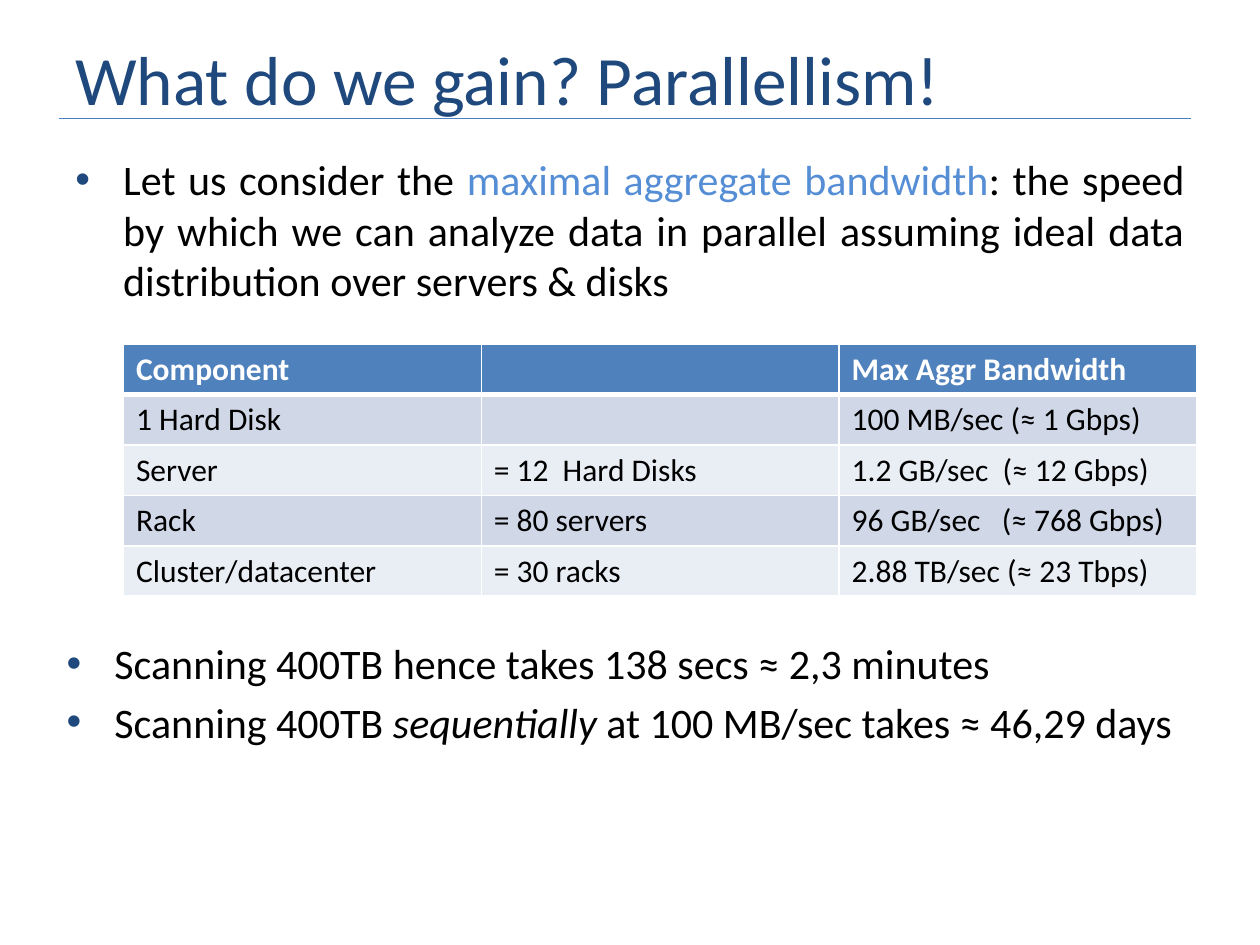
from lxml import etree
from pptx import Presentation
from pptx.dml.color import RGBColor
from pptx.enum.shapes import MSO_CONNECTOR
from pptx.enum.text import MSO_ANCHOR, PP_ALIGN
from pptx.oxml.ns import qn
from pptx.util import Inches, Pt

LINE = MSO_CONNECTOR.STRAIGHT
MIDDLE = MSO_ANCHOR.MIDDLE
JUSTIFY = PP_ALIGN.JUSTIFY

FONT = "Calibri"
NAVY, BLACK, WHITE = "1F497D", "000000", "FFFFFF"
SKY, RULE, HEAD = "558ED5", "4B7EBC", "4F81BD"
BANDS = ["D0D8E8", "E9EDF4"]


def color(code):
    return RGBColor.from_string(code)


def add_node(root, tag, **attrs):
    return etree.SubElement(root, qn(tag), attrs)


class Deck:
    def __init__(self, slide):
        self.slide = slide

    def run(self, para, text, size, code=BLACK, bold=False, italic=False):
        run = para.add_run()
        run.text = text
        font = run.font
        font.name, font.size = FONT, Pt(size)
        font.bold, font.italic = bold, italic
        font.color.rgb = color(code)

    def box(self, left, top, width, height):
        shape = self.slide.shapes.add_textbox(
            Inches(left), Inches(top), Inches(width), Inches(height))
        shape.text_frame.word_wrap = True
        return shape.text_frame

    def title(self, text, *place):
        frame = self.box(*place)
        frame.vertical_anchor = MIDDLE
        self.run(frame.paragraphs[0], text, 39.6, NAVY)

    def rule(self, left, right, top):
        line = self.slide.shapes.add_connector(
            LINE, Inches(left), Inches(top), Inches(right), Inches(top))
        line.line.color.rgb = color(RULE)
        line.line.width = Pt(0.75)
        add_node(line._element.spPr, "a:effectLst")

    def bullets(self, items, *place):
        """Each item is a list of (text, style) runs."""
        frame = self.box(*place)
        for i, item in enumerate(items):
            para = frame.add_paragraph() if i else frame.paragraphs[0]
            para.alignment = JUSTIFY
            props = para._p.get_or_add_pPr()
            props.set("marL", str(Inches(0.38)))
            props.set("indent", str(-Inches(0.38)))
            para.space_before = Pt(4.8)
            tint = add_node(props, "a:buClr")
            add_node(tint, "a:srgbClr", val=NAVY)
            add_node(props, "a:buFont", typeface="Arial")
            add_node(props, "a:buChar", char="•")
            for text, style in item:
                self.run(para, text, 24, **style)

    def edges(self, cell, base):
        """Draw white borders, with the bottom one base points wide."""
        props = cell._tc.get_or_add_tcPr()
        for side in "LRTB":
            width = base if side == "B" else 1
            line = add_node(props, f"a:ln{side}", w=str(Pt(width)))
            fill = add_node(line, "a:solidFill")
            add_node(fill, "a:srgbClr", val=WHITE)

    def table(self, rows, left, top, width, height):
        grid = self.slide.shapes.add_table(
            len(rows), len(rows[0]), Inches(left), Inches(top),
            Inches(width), Inches(height)).table
        for i, row in enumerate(rows):
            head = i == 0
            for j, text in enumerate(row):
                cell = grid.cell(i, j)
                self.edges(cell, 3 if head else 1)
                cell.fill.solid()
                cell.fill.fore_color.rgb = color(
                    HEAD if head else BANDS[(i - 1) % 2])
                if text:
                    self.run(cell.text_frame.paragraphs[0], text, 18,
                             WHITE if head else BLACK, bold=head)


def main():
    prs = Presentation()
    prs.slide_width, prs.slide_height = Inches(10), Inches(7.5)
    deck = Deck(prs.slides.add_slide(prs.slide_layouts[6]))

    deck.rule(0.47, 9.45, 0.94)
    deck.title("What do we gain? Parallellism!", 0.5, 0.3, 9, 0.64)
    deck.bullets([[
        ("Let us consider the ", {}),
        ("maximal aggregate bandwidth", {"code": SKY}),
        (": the speed by which we can analyze data in parallel assuming "
         "ideal data distribution over servers & disks", {}),
    ]], 0.5, 1.17, 9, 1.32)
    deck.table([
        ["Component", "", "Max Aggr Bandwidth"],
        ["1 Hard Disk", "", "100 MB/sec (≈ 1 Gbps)"],
        ["Server", "= 12  Hard Disks", "1.2 GB/sec  (≈ 12 Gbps)"],
        ["Rack", "= 80 servers", "96 GB/sec   (≈ 768 Gbps)"],
        ["Cluster/datacenter", "= 30 racks", "2.88 TB/sec (≈ 23 Tbps)"],
    ], 0.98, 2.73, 8.52, 2)
    deck.bullets([
        [("Scanning 400TB hence takes 138 secs ≈ 2,3 minutes", {})],
        [("Scanning 400TB ", {}),
         ("sequentially ", {"italic": True}),
         ("at 100 MB/sec takes ≈ 46,29 days", {})],
    ], 0.43, 5.01, 9, 1.32)

    prs.save("out.pptx")


if __name__ == "__main__":
    main()
